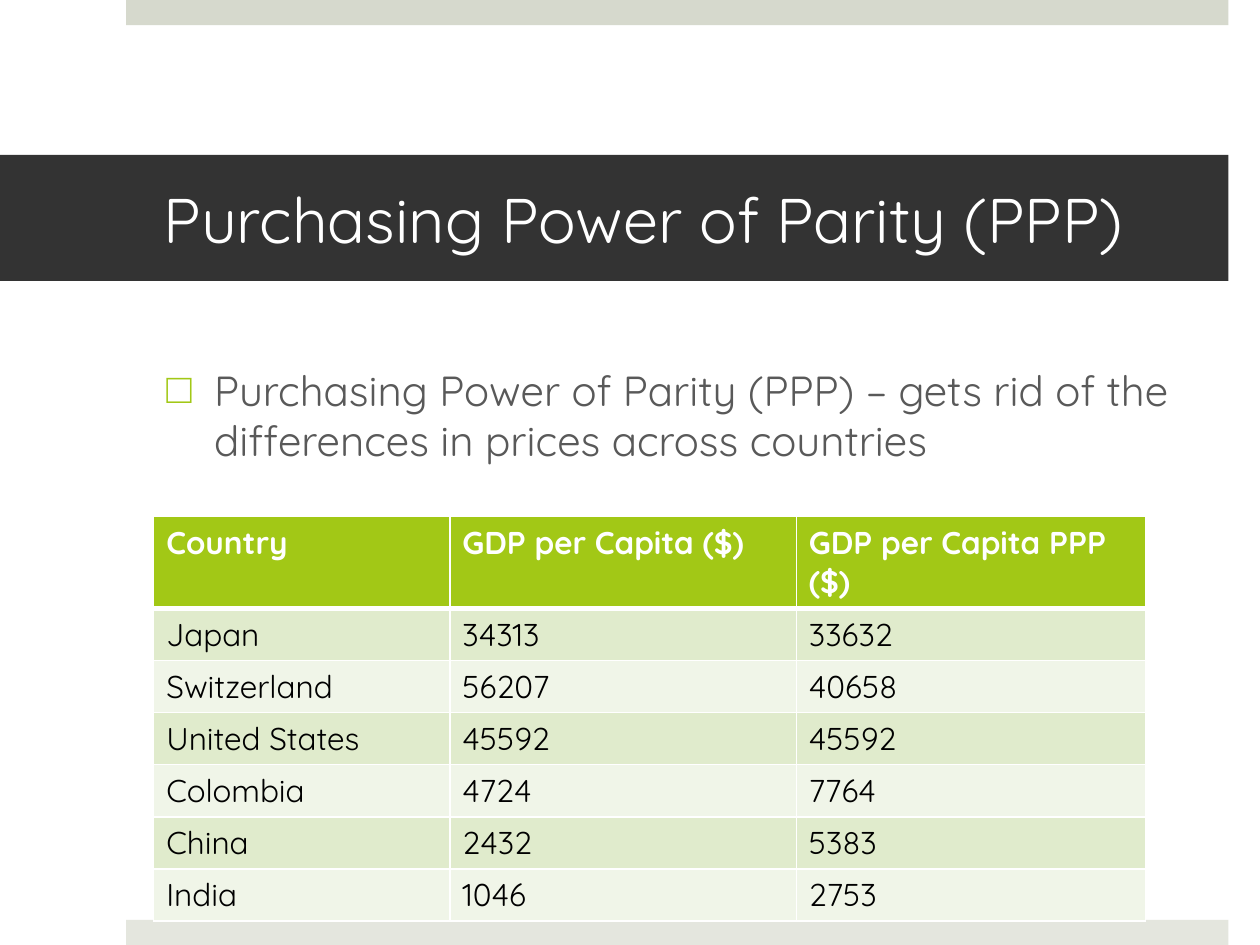
from typing import NamedTuple

from lxml.etree import SubElement
from pptx import Presentation
from pptx.dml.color import RGBColor as RGB
from pptx.enum.shapes import MSO_SHAPE as SHAPE
from pptx.enum.text import MSO_ANCHOR as ANCHOR, MSO_AUTO_SIZE as FIT, PP_ALIGN as ALIGN
from pptx.oxml.ns import qn
from pptx.util import Pt

FONT = "Quicksand"
COLORS = {
    "white": "FFFFFF", "black": "000000", "title": "333333", "body": "595959",
    "green": "A2C816", "odd": "E0EBCC", "even": "F0F5E8",
    "top": "D6D9CD", "bottom": "E4E6DE",
}


class Box(NamedTuple):
    left: float
    top: float
    width: float
    height: float


class Bar(NamedTuple):
    box: Box
    color: str


BARS = [
    Bar(Box(72, 0, 630, 14.4), "top"),
    Bar(Box(72, 525.6, 630, 14.4), "bottom"),
]
TITLE_BOX = Box(0, 88.56, 702, 72)
BODY_BOX = Box(87.84, 204.48, 599.04, 288.72)
TABLE_BOX = Box(87.84, 295.2, 566.64, 208.6)
COLUMNS = [169.2, 198, 199.44]
ROWS = [
    ("Country", "GDP per Capita ($)", "GDP per Capita PPP ($)"),
    ("Japan", "34313", "33632"),
    ("Switzerland", "56207", "40658"),
    ("United States", "45592", "45592"),
    ("Colombia", "4724", "7764"),
    ("China", "2432", "5383"),
    ("India", "1046", "2753"),
]


def rgb(name: str) -> RGB:
    return RGB.from_string(COLORS[name])


def write(tf, text: str, *, size: float, color: str, bold: bool = False):
    p = tf.paragraphs[0]
    p.alignment = ALIGN.LEFT
    r = p.add_run()
    r.text = text
    r.font.name = FONT
    r.font.size = Pt(size)
    r.font.bold = bold
    r.font.color.rgb = rgb(color)
    return p


def place(sp, box: Box) -> None:
    sp.left, sp.top, sp.width, sp.height = map(Pt, box)


def add_color(parent, color: str) -> None:
    SubElement(parent, qn("a:srgbClr"), val=COLORS[color])


def add_bar(slide, bar: Bar) -> None:
    sp = slide.shapes.add_shape(SHAPE.RECTANGLE, *map(Pt, bar.box))
    sp.shadow.inherit = False
    sp.fill.solid()
    sp.fill.fore_color.rgb = rgb(bar.color)
    sp.line.fill.background()


def add_title(slide, text: str) -> None:
    sp = slide.shapes.title
    place(sp, TITLE_BOX)
    sp.fill.solid()
    sp.fill.fore_color.rgb = rgb("title")
    tf = sp.text_frame
    tf.auto_size = FIT.NONE
    tf.vertical_anchor = ANCHOR.MIDDLE
    tf.margin_left, tf.margin_right = Pt(93.6), Pt(21.6)
    write(tf, text, size=36, color="white")


def add_body(slide, text: str) -> None:
    sp = slide.placeholders[1]
    place(sp, BODY_BOX)
    tf = sp.text_frame
    tf.auto_size = FIT.NONE
    p = write(tf, text, size=24, color="body")
    p.space_before = Pt(20)
    props = p._p.get_or_add_pPr()
    props.set("marL", str(Pt(27.36)))
    props.set("indent", str(-Pt(27.36)))
    add_color(SubElement(props, qn("a:buClr")), "green")
    SubElement(props, qn("a:buChar"), char="□")


def set_borders(cell, bottom: float, top: float) -> None:
    props = cell._tc.get_or_add_tcPr()
    widths = {"a:lnL": 1, "a:lnR": 1, "a:lnT": top, "a:lnB": bottom}
    for i, (tag, width) in enumerate(widths.items()):
        line = props.makeelement(qn(tag), {"w": str(Pt(width))})
        add_color(SubElement(line, qn("a:solidFill")), "white")
        props.insert(i, line)


def add_table(slide, rows: list) -> None:
    table = slide.shapes.add_table(len(rows), len(COLUMNS), *map(Pt, TABLE_BOX)).table
    for column, width in zip(table.columns, COLUMNS):
        column.width = Pt(width)
    for i, values in enumerate(rows):
        header = i == 0
        fill = "green" if header else "odd" if i % 2 else "even"
        for j, text in enumerate(values):
            cell = table.cell(i, j)
            cell.fill.solid()
            cell.fill.fore_color.rgb = rgb(fill)
            set_borders(cell, bottom=3 if header else 1, top=3 if i == 1 else 1)
            write(cell.text_frame, text, size=18, bold=header,
                  color="white" if header else "black")


def main() -> None:
    prs = Presentation()
    prs.slide_width, prs.slide_height = Pt(720), Pt(540)
    s = prs.slides.add_slide(prs.slide_layouts[1])
    for bar in BARS:
        add_bar(s, bar)
    add_title(s, "Purchasing Power of Parity (PPP)")
    add_body(s, "Purchasing Power of Parity (PPP) – gets rid of the "
                "differences in prices across countries")
    add_table(s, ROWS)
    prs.save("out.pptx")


if __name__ == "__main__":
    main()
